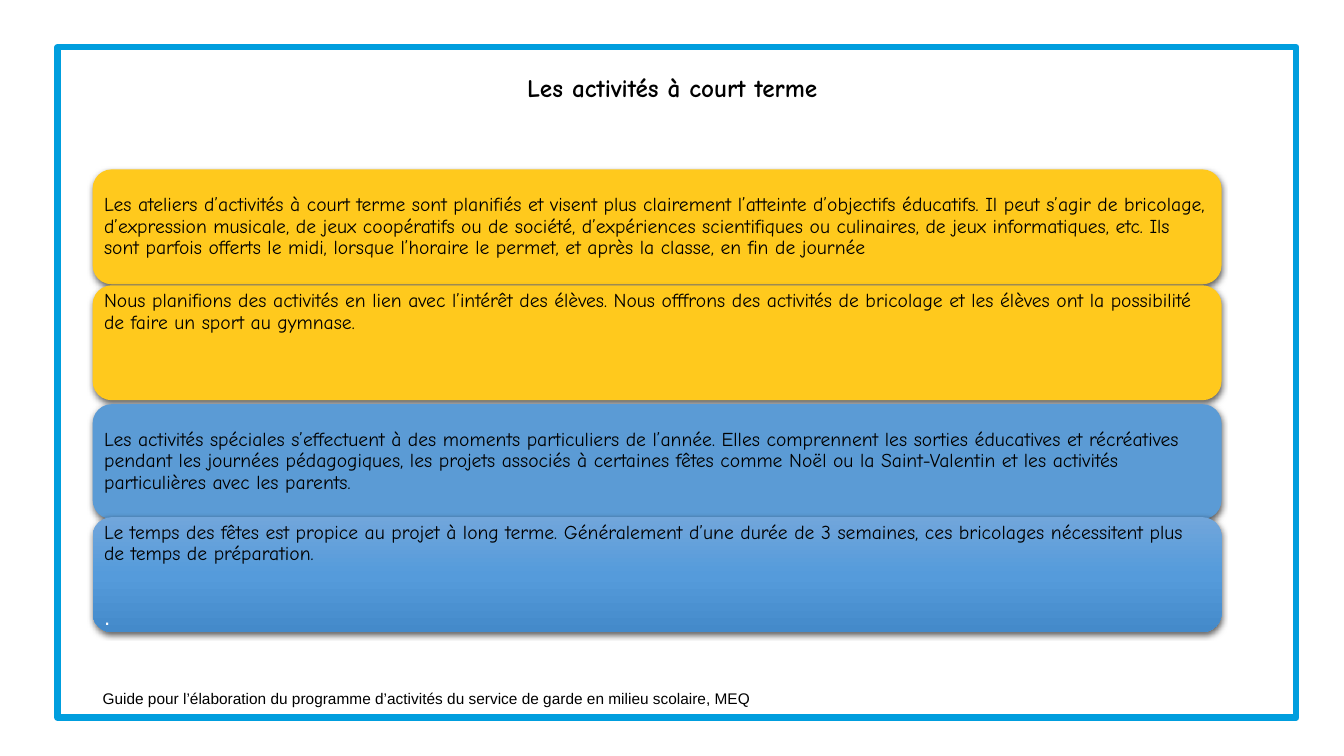
from copy import deepcopy

from lxml.etree import SubElement
from pptx import Presentation
from pptx.dml.color import RGBColor
from pptx.enum.shapes import MSO_SHAPE as SHAPE
from pptx.enum.text import MSO_ANCHOR as ANCHOR, PP_ALIGN as ALIGN
from pptx.oxml.ns import qn
from pptx.util import Pt

BLACK = RGBColor(0x00, 0x00, 0x00)
WHITE = RGBColor(0xFF, 0xFF, 0xFF)
FRAME = RGBColor(0x00, 0x9E, 0xDE)
YELLOW = RGBColor(0xFF, 0xC9, 0x1D)
BLUE = RGBColor(0x5B, 0x9B, 0xD5)
BLUE_FADE = [RGBColor(0x71, 0xA6, 0xDB), RGBColor(0x55, 0x9B, 0xDB),
             RGBColor(0x44, 0x8A, 0xCA)]
HAND, PLAIN = "Comic Neue", "Arial"

TITLE = "Les activités à court terme"
SOURCE = ("Guide pour l’élaboration du programme d’activités du service de "
          "garde en milieu scolaire, MEQ")
# top, fill (a list is a gradient), anchor, text, closing mark
CARDS = [
    (121, YELLOW, ANCHOR.MIDDLE,
     "Les ateliers d’activités à court terme sont planifiés et visent plus "
     "clairement l’atteinte d’objectifs éducatifs. Il peut s’agir de "
     "bricolage, d’expression musicale, de jeux coopératifs ou de société, "
     "d’expériences scientifiques ou culinaires, de jeux informatiques, etc. "
     "Ils sont parfois offerts le midi, lorsque l’horaire le permet, et après "
     "la classe, en fin de journée", None),
    (203.8, YELLOW, ANCHOR.TOP,
     "Nous planifions des activités en lien avec l’intérêt des élèves. Nous "
     "offfrons des activités de bricolage et les élèves ont la possibilité de "
     "faire un sport au gymnase.", None),
    (288.7, BLUE, ANCHOR.MIDDLE,
     "Les activités spéciales s’effectuent à des moments particuliers de "
     "l’année. Elles comprennent les sorties éducatives et récréatives pendant "
     "les journées pédagogiques, les projets associés à certaines fêtes comme "
     "Noël ou la Saint-Valentin et les activités particulières avec les "
     "parents.", None),
    (369.4, BLUE_FADE, ANCHOR.TOP,
     "Le temps des fêtes est propice au projet à long terme. Généralement "
     "d’une durée de 3 semaines, ces bricolages nécessitent plus de temps de "
     "préparation.", "."),
]
LEFT, CARD_W, CARD_H = 66.2, 806.4, 82.1


def add_run(p, text, size, font, color=BLACK, bold=False):
    r = p.add_run()
    r.text = text
    r.font.size, r.font.name, r.font.bold = Pt(size), font, bold
    r.font.color.rgb = color


def add_box(s, x, y, w, h):
    tf = s.shapes.add_textbox(Pt(x), Pt(y), Pt(w), Pt(h)).text_frame
    tf.word_wrap = True
    return tf


def add_shadow(sp):
    """Soft shadow falling straight down."""
    sp.shadow.inherit = False
    effects = sp._element.spPr.find(qn("a:effectLst"))
    shadow = SubElement(effects, qn("a:outerShdw"), blurRad=str(Pt(4.5)),
                        dist=str(Pt(1.5)), dir="5400000", rotWithShape="0")
    color = SubElement(shadow, qn("a:srgbClr"), val="000000")
    SubElement(color, qn("a:alpha"), val="63000")


def fill_gradient(sp, colors):
    """Three even stops from top to bottom."""
    sp.fill.gradient()
    sp.fill.gradient_angle = 270
    stops = sp._element.spPr.find(".//" + qn("a:gsLst"))
    stops.insert(1, deepcopy(stops[0]))
    for i, (stop, color) in enumerate(zip(sp.fill.gradient_stops, colors)):
        stop.position = i / 2
        stop.color.rgb = color


def add_card(s, top, fill, anchor, text, mark):
    sp = s.shapes.add_shape(SHAPE.ROUNDED_RECTANGLE, Pt(LEFT), Pt(top),
                            Pt(CARD_W), Pt(CARD_H))
    if isinstance(fill, list):
        fill_gradient(sp, fill)
    else:
        sp.fill.solid()
        sp.fill.fore_color.rgb = fill
    sp.line.fill.background()
    add_shadow(sp)
    tf = sp.text_frame
    tf.word_wrap, tf.vertical_anchor = True, anchor
    tf.margin_left = tf.margin_right = Pt(4.2)
    tf.margin_top = tf.margin_bottom = 0
    p = tf.paragraphs[0]
    p.alignment, p.line_spacing = ALIGN.LEFT, 0.9
    add_run(p, text, 14, HAND)
    if mark:
        p = tf.add_paragraph()
        p.alignment, p.line_spacing, p.space_before = ALIGN.LEFT, 0.9, Pt(29)
        add_run(p, mark, 16, PLAIN, WHITE)


def main():
    prs = Presentation()
    prs.slide_width, prs.slide_height = Pt(960), Pt(540)
    s = prs.slides.add_slide(prs.slide_layouts[6])

    frame = s.shapes.add_shape(SHAPE.RECTANGLE, Pt(41), Pt(33.8), Pt(885), Pt(478.8))
    frame.shadow.inherit = False
    frame.fill.background()
    frame.line.color.rgb, frame.line.width = FRAME, Pt(4.5)

    tf = add_box(s, LEFT, 28, 828, 71.3)
    tf.vertical_anchor = ANCHOR.MIDDLE
    p = tf.paragraphs[0]
    p.alignment, p.line_spacing = ALIGN.CENTER, 0.9
    add_run(p, TITLE, 18, HAND, bold=True)

    tf = add_box(s, LEFT, 488.9, 753, 20.9)
    add_run(tf.paragraphs[0], SOURCE, 11, PLAIN)

    for card in CARDS:
        add_card(s, *card)
    prs.save("out.pptx")


if __name__ == "__main__":
    main()
